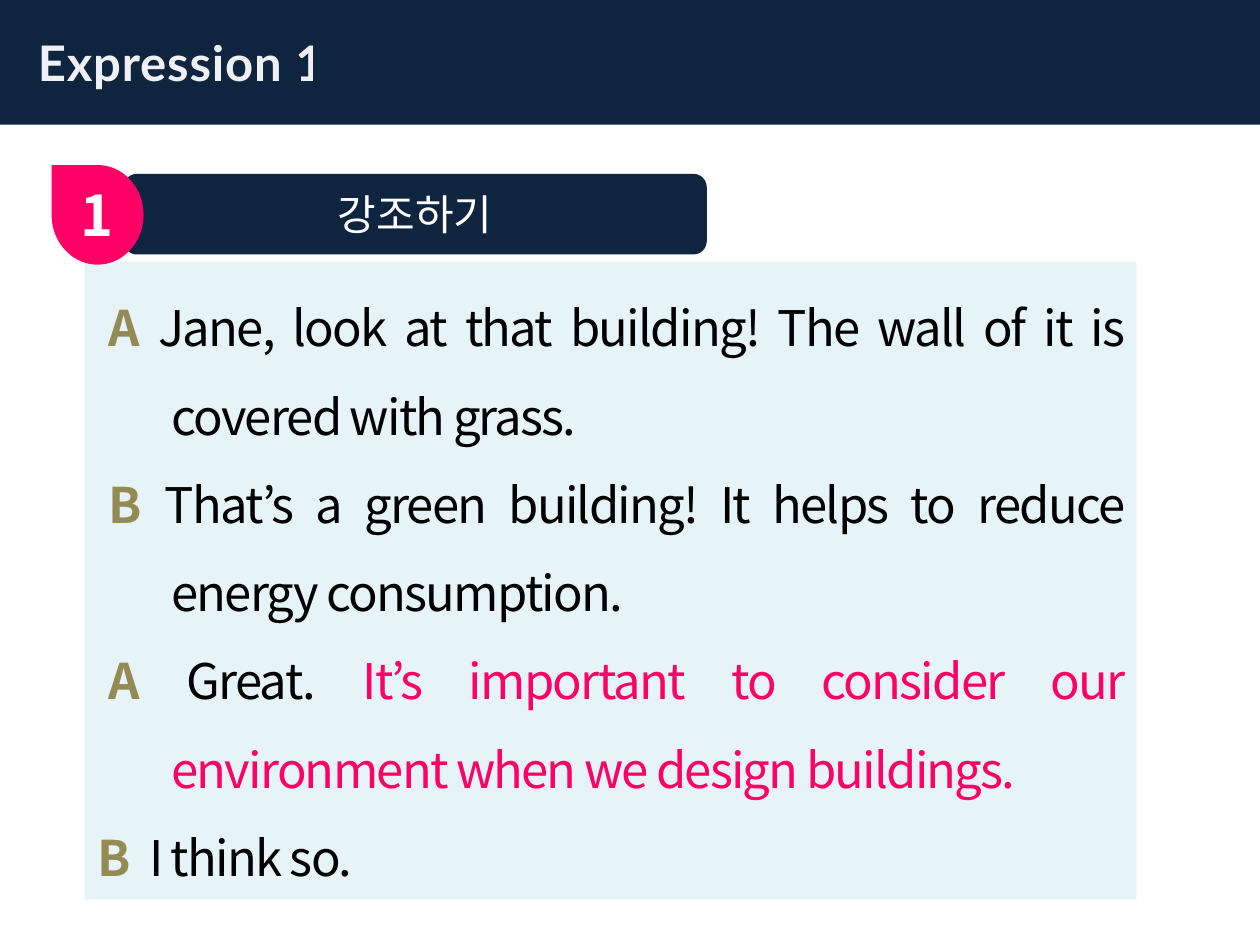
from lxml.etree import SubElement
from pptx import Presentation
from pptx.dml.color import RGBColor
from pptx.enum.shapes import MSO_SHAPE
from pptx.enum.text import MSO_ANCHOR, MSO_AUTO_SIZE, PP_ALIGN
from pptx.oxml.ns import qn
from pptx.util import Inches, Pt

COLORS = {
    "navy": "0F243E", "pink": "FF0066", "panel": "B7DEE8", "speaker": "948A54",
    "black": "000000", "white": "FFFFFF", "title": "FCFCFD", "outline": "101A26",
}
LATIN, KOREAN = "Lato", "Noto Sans CJK KR"
TITLE = "Expression 1"
HEADING = "강조하기"
NUMBER = "1"
DIALOGUE = [
    ("A ", [("Jane, look at that building! The wall of it is covered with grass.", "black")], True),
    ("B ", [("That’s a green building! It helps to reduce energy consumption.", "black")], True),
    ("A ", [("Great. ", "black"),
            ("It’s important to consider our environment when we design buildings.", "pink")], True),
    ("B  ", [("I think so.", "black")], False),
]


def rgb(name):
    return RGBColor.from_string(COLORS[name])


def place(shape, left, top, width, height):
    shape.left, shape.top = Inches(left), Inches(top)
    shape.width, shape.height = Inches(width), Inches(height)


def set_fill(shape, color, alpha=None):
    shape.fill.solid()
    shape.fill.fore_color.rgb = rgb(color)
    shape.line.fill.background()
    if alpha is not None:
        set_alpha(shape.fill, alpha)


def set_alpha(fill, percent):
    color = fill._xPr.find(qn("a:solidFill"))[0]
    SubElement(color, qn("a:alpha")).set("val", str(percent * 1000))


def style_run(run, color, size, bold=False, font=KOREAN, spacing=0):
    run.font.name, run.font.size, run.font.bold = font, Pt(size), bold
    run.font.color.rgb = rgb(color)
    properties = run._r.get_or_add_rPr()
    SubElement(properties, qn("a:ea")).set("typeface", font)
    if spacing:
        properties.set("spc", str(int(spacing * 100)))


def add_run(paragraph, text, *style, **options):
    run = paragraph.add_run()
    run.text = text
    style_run(run, *style, **options)
    return run


def add_shape(slide, kind, box, color):
    shape = slide.shapes.add_shape(kind, *map(Inches, box))
    shape.shadow.inherit = False
    set_fill(shape, color)
    return shape


def add_title(slide):
    title = slide.shapes.title
    place(title, 0, 0, 10, 0.99)
    set_fill(title, "navy")
    frame = title.text_frame
    frame.auto_size = MSO_AUTO_SIZE.NONE
    frame.vertical_anchor = MSO_ANCHOR.MIDDLE
    frame.margin_left = Inches(0.3)
    paragraph = frame.paragraphs[0]
    paragraph.alignment = PP_ALIGN.LEFT
    run = add_run(paragraph, TITLE, "title", 28, True, LATIN, 0.5)
    set_alpha(run.font.fill, 95)
    line = run._r.get_or_add_rPr().makeelement(qn("a:ln"), {"w": str(Pt(1.06))})
    color = SubElement(SubElement(line, qn("a:solidFill")), qn("a:srgbClr"))
    color.set("val", COLORS["outline"])
    SubElement(color, qn("a:alpha")).set("val", "6000")
    run._r.get_or_add_rPr().insert(0, line)


def add_dialogue(slide):
    body = slide.placeholders[1]
    place(body, 0.67, 2.08, 8.35, 5.06)
    set_fill(body, "panel", 32)
    frame = body.text_frame
    frame.auto_size = MSO_AUTO_SIZE.NONE
    frame.vertical_anchor = MSO_ANCHOR.TOP
    for index, (speaker, parts, hanging) in enumerate(DIALOGUE):
        paragraph = frame.add_paragraph() if index else frame.paragraphs[0]
        paragraph.alignment = PP_ALIGN.JUSTIFY
        paragraph.line_spacing = 1.5
        paragraph.space_before = Pt(0)
        properties = paragraph._p.get_or_add_pPr()
        properties.set("marL", str(Inches(0.59 if hanging else 0)))
        properties.set("indent", str(Inches(-0.5 if hanging else 0)))
        SubElement(properties, qn("a:buNone"))
        add_run(paragraph, speaker, "speaker", 28, True, spacing=-1)
        for text, color in parts:
            add_run(paragraph, text, color, 28, spacing=-1)


def add_heading(slide):
    bar = add_shape(slide, MSO_SHAPE.FLOWCHART_ALTERNATE_PROCESS, (0.98, 1.38, 4.63, 0.64), "navy")
    bar.text_frame.vertical_anchor = MSO_ANCHOR.MIDDLE
    paragraph = bar.text_frame.paragraphs[0]
    paragraph.alignment = PP_ALIGN.CENTER
    add_run(paragraph, HEADING, "white", 24)

    badge = add_shape(slide, MSO_SHAPE.TEAR, (0.38, 1.34, 0.79, 0.73), "pink")
    badge.rotation = 270

    label = slide.shapes.add_textbox(*map(Inches, (0.54, 1.38, 0.47, 0.64)))
    label.text_frame.word_wrap = True
    label.text_frame.auto_size = MSO_AUTO_SIZE.SHAPE_TO_FIT_TEXT
    add_run(label.text_frame.paragraphs[0], NUMBER, "white", 32, True)


def main():
    """Build the expression slide with its dialogue."""
    presentation = Presentation()
    presentation.slide_width, presentation.slide_height = Inches(10), Inches(7.5)
    slide = presentation.slides.add_slide(presentation.slide_layouts[1])
    add_title(slide)
    add_dialogue(slide)
    add_heading(slide)
    presentation.save("out.pptx")


if __name__ == "__main__":
    main()
